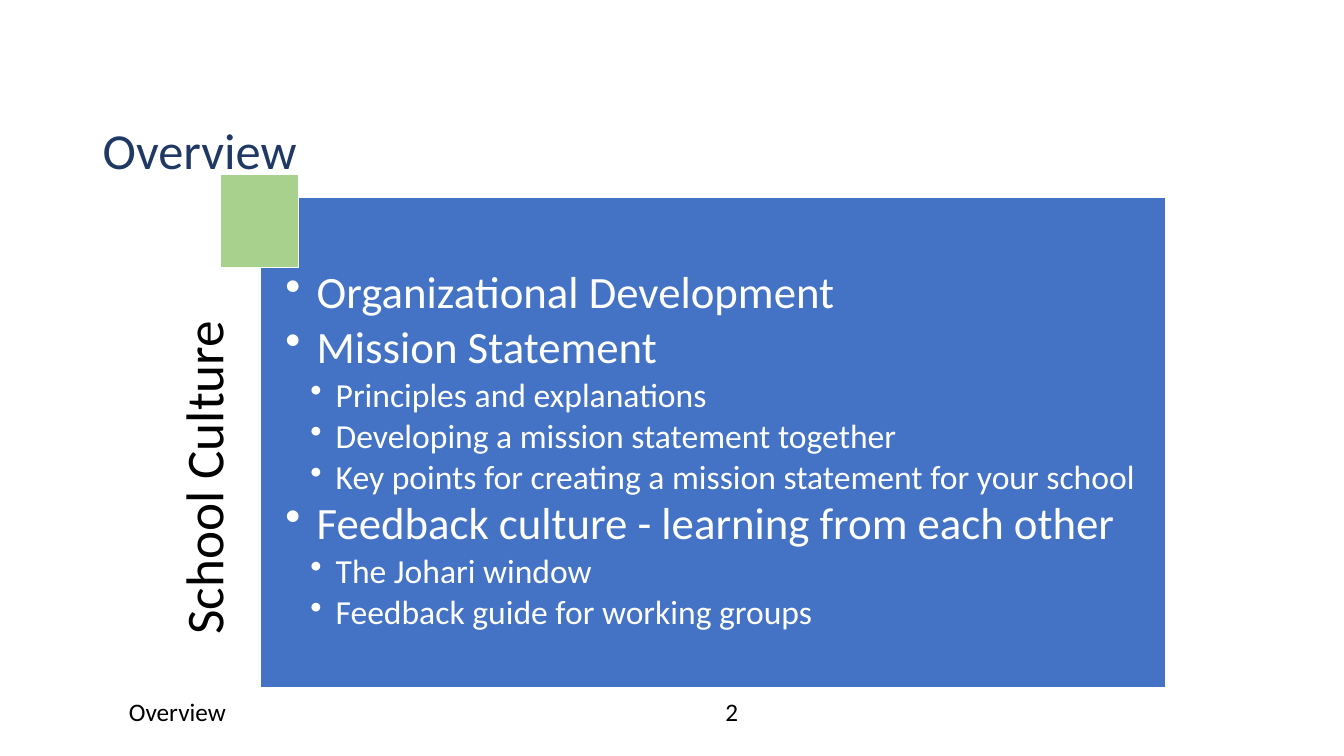
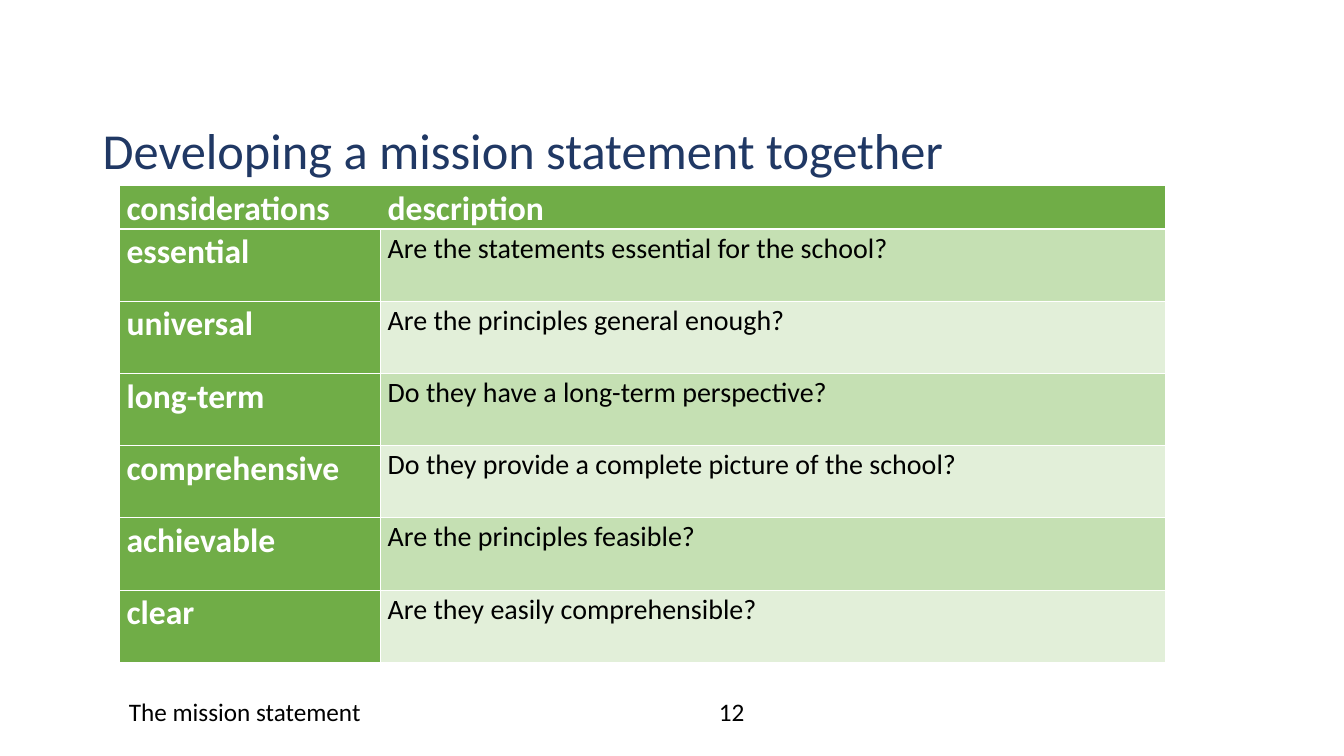
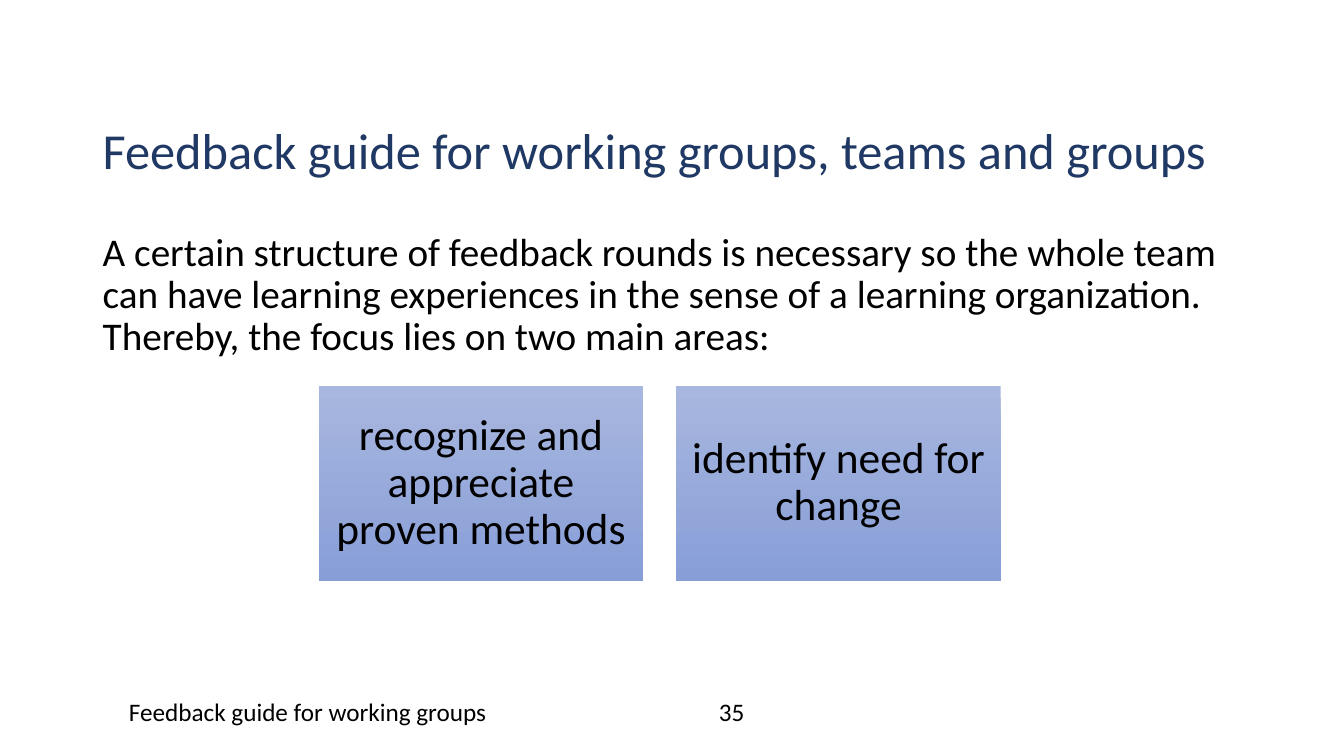
from dataclasses import dataclass
from typing import Optional, Sequence

from lxml.etree import SubElement
from pptx import Presentation
from pptx.dml.color import RGBColor
from pptx.enum.shapes import MSO_SHAPE as Preset
from pptx.enum.text import MSO_ANCHOR as Anchor, PP_ALIGN as Align
from pptx.oxml.ns import qn
from pptx.util import Cm, Pt

FONT = "Calibri"
COLORS = {
    "white": "FFFFFF",
    "black": "000000",
    "title": "203864",
    "panel": "4472C4",
    "accent": "A9D18E",
    "header": "70AD47",
    "band_dark": "C5E0B3",
    "band_light": "E2EFD9",
    "card_top": "A8B7DF",
    "card_bottom": "889ED7",
}


@dataclass(frozen=True)
class Area:
    """A rectangle in centimetres."""
    left: float
    top: float
    width: float
    height: float

    def lengths(self) -> tuple:
        return Cm(self.left), Cm(self.top), Cm(self.width), Cm(self.height)


@dataclass(frozen=True)
class TextStyle:
    size: float
    color: str = "black"
    bold: bool = False
    align: Align = Align.LEFT
    spacing: float = 1.0


@dataclass(frozen=True)
class BulletLevel:
    indent: float
    hanging: float
    style: TextStyle


@dataclass(frozen=True)
class Consideration:
    name: str
    question: str


# Shared slide parts
TITLE_AREA = Area(2.34, 3.05, 29.21, 2.46)
FOOTER_AREA = Area(3, 17.42, 11.43, 1.02)
NUMBER_AREA = Area(14.63, 17.42, 7.62, 1.02)
BODY_AREA = Area(2.34, 5.72, 29.21, 11.46)
DEFAULT_INSETS = (0.25, 0.13, 0.25, 0.13)

TITLE = TextStyle(36, "title", spacing=0.9)
FOOTER = TextStyle(18)
NUMBER = TextStyle(18, align=Align.CENTER)
BODY = TextStyle(28, spacing=0.9)

# Overview slide
PANEL_AREA = Area(6.55, 4.98, 22.83, 12.34)
SQUARE_AREA = Area(5.56, 4.39, 1.96, 2.36)
SIDE_AREA = Area(0.61, 10.11, 9.8, 2.08)
SIDE_LABEL = TextStyle(38, align=Align.RIGHT, spacing=0.9)
LEVELS = {
    1: BulletLevel(0.79, 0.79, TextStyle(32, "white", spacing=0.9)),
    2: BulletLevel(1.27, 0.64, TextStyle(24, "white", spacing=0.9)),
}
TOPICS = [
    (1, "Organizational Development"),
    (1, "Mission Statement"),
    (2, "Principles and explanations"),
    (2, "Developing a mission statement together"),
    (2, "Key points for creating a mission statement for your school"),
    (1, "Feedback culture - learning from each other"),
    (2, "The Johari window"),
    (2, "Feedback guide for working groups"),
]

# Table slide
COLUMN_WIDTHS = (6.58, 19.79)
HEADER_HEIGHT, ROW_HEIGHT = 1.1, 1.82
TABLE_HEAD = TextStyle(24, "white", bold=True, spacing=1.07)
TABLE_TEXT = TextStyle(20, spacing=1.07)
CONSIDERATIONS = [
    Consideration("essential", "Are the statements essential for the school?"),
    Consideration("universal", "Are the principles general enough?"),
    Consideration("long-term", "Do they have a long-term perspective?"),
    Consideration("comprehensive", "Do they provide a complete picture of the school?"),
    Consideration("achievable", "Are the principles feasible?"),
    Consideration("clear", "Are they easily comprehensible?"),
]

# Feedback slide
FIRST_CARD = Area(8.03, 9.73, 8.18, 4.9)
CARD_GAP = 0.83
CARD = TextStyle(31, align=Align.CENTER, spacing=0.9)
FOCUS_AREAS = ["recognize and appreciate proven methods", "identify need for change"]


def rgb(name: str) -> RGBColor:
    return RGBColor.from_string(COLORS[name])


def style_paragraph(para, style: TextStyle) -> None:
    para.alignment = style.align
    para.line_spacing = style.spacing
    font = para.font
    font.name, font.size, font.bold = FONT, Pt(style.size), style.bold
    font.color.rgb = rgb(style.color)


def set_frame(frame, insets: Sequence[float], anchor: Anchor = Anchor.TOP) -> None:
    frame.word_wrap = True
    frame.vertical_anchor = anchor
    (frame.margin_left, frame.margin_top,
     frame.margin_right, frame.margin_bottom) = map(Cm, insets)


def add_text(page, area: Area, text: str, style: TextStyle,
             insets: Sequence[float] = DEFAULT_INSETS):
    box = page.shapes.add_textbox(*area.lengths())
    set_frame(box.text_frame, insets)
    para = box.text_frame.paragraphs[0]
    para.text = text
    style_paragraph(para, style)
    return box


def add_box(page, area: Area, fill: Optional[str] = None, line: Optional[str] = None):
    box = page.shapes.add_shape(Preset.RECTANGLE, *area.lengths())
    box.shadow.inherit = False
    if fill:
        box.fill.solid()
        box.fill.fore_color.rgb = rgb(fill)
    if line:
        box.line.color.rgb = rgb(line)
        box.line.width = Pt(1)
    else:
        box.line.fill.background()
    return box


def add_page(deck, title: str, footer: str, number: int):
    page = deck.slides.add_slide(deck.slide_layouts[6])
    add_text(page, TITLE_AREA, title, TITLE)
    add_text(page, FOOTER_AREA, footer, FOOTER)
    add_text(page, NUMBER_AREA, str(number), NUMBER)
    return page


def add_bullet(para, level: BulletLevel) -> None:
    props = para._p.get_or_add_pPr()
    props.set("marL", str(Cm(level.indent)))
    props.set("indent", str(-Cm(level.hanging)))
    SubElement(props, qn("a:buChar"), char="•")


def set_borders(cell, hidden: Sequence[str] = ()) -> None:
    props = cell._tc.get_or_add_tcPr()
    for position, side in enumerate(("lnL", "lnR", "lnT", "lnB")):
        line = SubElement(props, qn(f"a:{side}"), w=str(Pt(1)))
        if side in hidden:
            SubElement(line, qn("a:noFill"))
        else:
            fill = SubElement(line, qn("a:solidFill"))
            SubElement(fill, qn("a:srgbClr"), val=COLORS["white"])
        props.insert(position, line)


def fill_cell(cell, text: str, style: TextStyle, fill: str,
              hidden: Sequence[str] = ()) -> None:
    (cell.margin_left, cell.margin_top,
     cell.margin_right, cell.margin_bottom) = map(Cm, (0.19, 0, 0.19, 0))
    cell.fill.solid()
    cell.fill.fore_color.rgb = rgb(fill)
    set_borders(cell, hidden)
    para = cell.text_frame.paragraphs[0]
    para.text = text
    style_paragraph(para, style)


def build_overview(deck) -> None:
    page = add_page(deck, "Overview", "Overview", 2)
    side = add_text(page, SIDE_AREA, "School Culture", SIDE_LABEL, (0, 0, 1.83, 0))
    side.rotation = 270

    # Topic list
    panel = add_box(page, PANEL_AREA, "panel", "white")
    frame = panel.text_frame
    set_frame(frame, (0.64, 1.83, 0.64, 0.64))
    for index, (depth, topic) in enumerate(TOPICS):
        para = frame.add_paragraph() if index else frame.paragraphs[0]
        level = LEVELS[depth]
        para.text = topic
        para.level = depth
        para.space_after = Pt(round(level.style.size * 0.13, 1))
        add_bullet(para, level)
        style_paragraph(para, level.style)

    add_box(page, SQUARE_AREA, "accent", "white")


def build_considerations(deck) -> None:
    page = add_page(deck, "Developing a mission statement together",
                    "The mission statement", 12)
    area = Area(3, 4.67, sum(COLUMN_WIDTHS),
                HEADER_HEIGHT + ROW_HEIGHT * len(CONSIDERATIONS))
    table = page.shapes.add_table(len(CONSIDERATIONS) + 1, len(COLUMN_WIDTHS),
                                  *area.lengths()).table
    table.horz_banding = False
    for column, width in zip(table.columns, COLUMN_WIDTHS):
        column.width = Cm(width)
    for index, row in enumerate(table.rows):
        row.height = Cm(ROW_HEIGHT if index else HEADER_HEIGHT)

    # Header row, without a line between its cells
    fill_cell(table.cell(0, 0), "considerations", TABLE_HEAD, "header", ["lnR"])
    fill_cell(table.cell(0, 1), "description", TABLE_HEAD, "header", ["lnL"])
    for row, item in enumerate(CONSIDERATIONS, start=1):
        band = "band_dark" if row % 2 else "band_light"
        fill_cell(table.cell(row, 0), item.name, TABLE_HEAD, "header")
        fill_cell(table.cell(row, 1), item.question, TABLE_TEXT, band)


def build_feedback(deck) -> None:
    page = add_page(deck, "Feedback guide for working groups, teams and groups",
                    "Feedback guide for working groups", 35)
    add_text(page, BODY_AREA,
             "A certain structure of feedback rounds is necessary so the whole team "
             "can have learning experiences in the sense of a learning organization. "
             "Thereby, the focus lies on two main areas:", BODY)

    # Focus cards
    for index, focus in enumerate(FOCUS_AREAS):
        left = FIRST_CARD.left + index * (FIRST_CARD.width + CARD_GAP)
        card = add_box(page, Area(left, FIRST_CARD.top, FIRST_CARD.width, FIRST_CARD.height))
        card.fill.gradient()
        card.fill.gradient_angle = 270
        for stop, color in zip(card.fill.gradient_stops, ("card_top", "card_bottom")):
            stop.color.rgb = rgb(color)
        set_frame(card.text_frame, (0.33,) * 4, Anchor.MIDDLE)
        para = card.text_frame.paragraphs[0]
        para.text = focus
        style_paragraph(para, CARD)


def main() -> None:
    deck = Presentation()
    deck.slide_width, deck.slide_height = Cm(33.87), Cm(19.05)
    build_overview(deck)
    build_considerations(deck)
    build_feedback(deck)
    deck.save("out.pptx")


if __name__ == "__main__":
    main()
